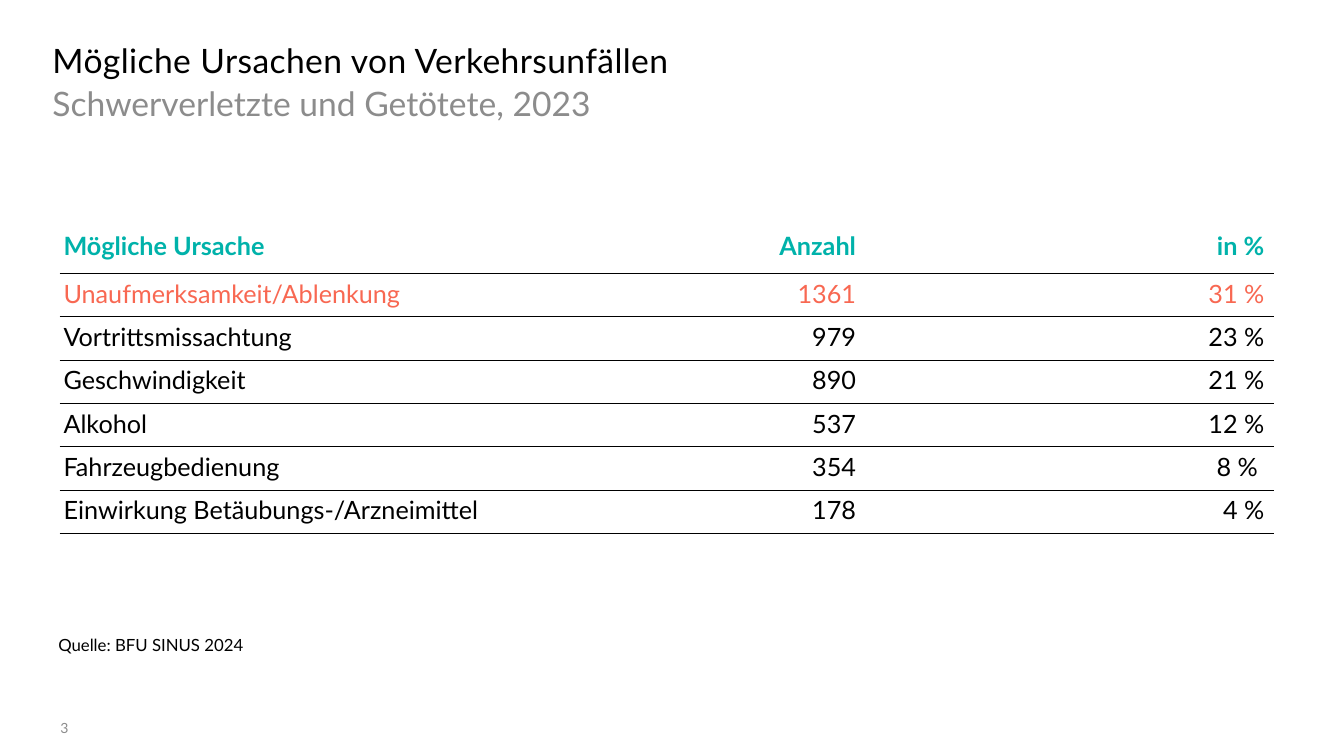
from dataclasses import dataclass
from lxml.etree import SubElement
from pptx import Presentation
from pptx.dml.color import RGBColor
from pptx.enum.text import PP_ALIGN
from pptx.oxml.ns import qn
from pptx.util import Inches, Pt

TITLE = "Mögliche Ursachen von Verkehrsunfällen"
SUBTITLE = "Schwerverletzte und Getötete, 2023"
CAUSES = [
    ("Mögliche Ursache", "Anzahl", "in %"),
    ("Unaufmerksamkeit/Ablenkung", "1361", "31 %"),
    ("Vortrittsmissachtung", "979", "23 %"),
    ("Geschwindigkeit", "890", "21 %"),
    ("Alkohol", "537", "12 %"),
    ("Fahrzeugbedienung", "354", "8 % "),
    ("Einwirkung Betäubungs-/Arzneimittel", "178", "4 %"),
]
SOURCE = "Quelle: BFU SINUS 2024"
PAGE = "3"


@dataclass(frozen=True)
class Theme:
    font: str = "Lato"
    ink: str = "000000"
    muted: str = "8C8C8C"
    header: str = "00B2AA"
    highlight: str = "F86852"
    heading: int = 24
    table: int = 18
    source: int = 12
    page: int = 10


THEME = Theme()
WIDTH, HEIGHT = 13.33, 7.5
TABLE_LEFT, TABLE_TOP = 0.59, 2.24
COLUMNS = (6.34, 1.66, 4.05)
HEADER_ROW, BODY_ROW = 0.47, 0.43
CELL_INSETS = (0.04, 0.05, 0.1, 0.05)
RULE, LAST_RULE = 0.5, 1


def set_insets(target, insets):
    left, top, right, bottom = map(Inches, insets)
    target.margin_left, target.margin_top = left, top
    target.margin_right, target.margin_bottom = right, bottom


def write(frame, text, size, color, bold=False):
    frame.text = text
    paragraph = frame.paragraphs[0]
    font = paragraph.runs[0].font
    font.name, font.size, font.bold = THEME.font, Pt(size), bold
    font.color.rgb = RGBColor.from_string(color)
    return paragraph


def add_text(slide, area, text, size, color, insets=(0, 0, 0, 0)):
    frame = slide.shapes.add_textbox(*map(Inches, area)).text_frame
    frame.word_wrap = True
    set_insets(frame, insets)
    return write(frame, text, size, color)


def set_borders(cell, top, bottom):
    properties = cell._tc.get_or_add_tcPr()
    for side, points in (("L", 0), ("R", 0), ("T", top), ("B", bottom)):
        line = SubElement(properties, qn(f"a:ln{side}"), w=str(Pt(points)))
        if points:
            fill = SubElement(line, qn("a:solidFill"))
            SubElement(fill, qn("a:srgbClr"), val=THEME.ink)
        else:
            SubElement(line, qn("a:noFill"))


def add_causes(slide):
    last = len(CAUSES) - 1
    heights = [HEADER_ROW] + [BODY_ROW] * last
    area = (TABLE_LEFT, TABLE_TOP, sum(COLUMNS), sum(heights))
    table = slide.shapes.add_table(
        len(CAUSES), len(COLUMNS), *map(Inches, area)).table
    table.horz_banding = False
    for column, width in zip(table.columns, COLUMNS):
        column.width = Inches(width)
    row_colors = {0: THEME.header, 1: THEME.highlight}
    for row, (cause, height) in enumerate(zip(CAUSES, heights)):
        table.rows[row].height = Inches(height)
        for column, value in enumerate(cause):
            cell = table.cell(row, column)
            set_insets(cell, CELL_INSETS)
            set_borders(cell, RULE if row else 0,
                        LAST_RULE if row == last else RULE)
            cell.fill.background()
            paragraph = write(cell.text_frame, value, THEME.table,
                              row_colors.get(row, THEME.ink), row == 0)
            paragraph.alignment = PP_ALIGN.RIGHT if column else PP_ALIGN.LEFT


def main():
    deck = Presentation()
    deck.slide_width, deck.slide_height = Inches(WIDTH), Inches(HEIGHT)
    slide = deck.slides.add_slide(deck.slide_layouts[6])
    title = add_text(slide, (0.52, 0.4, 12.28, 0.35), TITLE,
                     THEME.heading, THEME.ink)
    title.runs[0].font._element.set("spc", "30")
    subtitle = add_text(slide, (0.52, 0.8, 12.28, 0.39), SUBTITLE,
                        THEME.heading, THEME.muted)
    subtitle.line_spacing = 1.05
    add_causes(slide)
    add_text(slide, (0.48, 6.25, 12.43, 0.3), SOURCE, THEME.source,
             THEME.ink, (0.1, 0.05, 0.1, 0.05))
    add_text(slide, (0.6, 7.14, 0.89, 0.18), PAGE, THEME.page, THEME.muted)
    deck.save("out.pptx")


if __name__ == "__main__":
    main()
